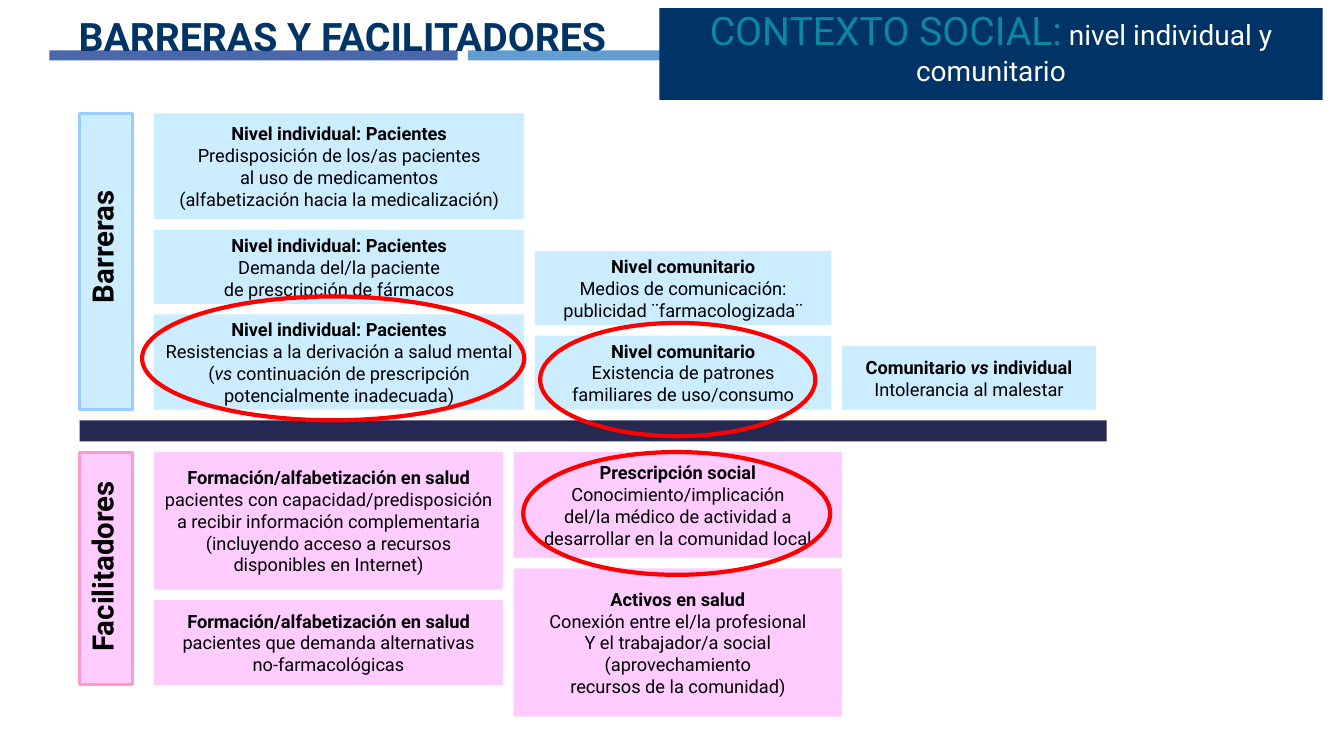
from dataclasses import dataclass

from pptx import Presentation, util as u
from pptx.dml import color
from pptx.enum import shapes, text


@dataclass(frozen=True)
class Theme:
    font: str = "Roboto"
    navy: str = "003366"
    teal: str = "0B87A1"
    white: str = "FFFFFF"
    black: str = "000000"
    indigo: str = "4A66AC"
    sky: str = "629DD1"
    divider: str = "242852"
    barrier: str = "CCECFF"
    barrier_edge: str = "99CCFF"
    enabler: str = "FFCCFF"
    enabler_edge: str = "FF99CC"
    highlight: str = "FF0000"
    title_size: int = 28
    subtitle_size: int = 20
    label_size: int = 21
    body_size: int = 13


class Board:
    """Holds the style and the slide; lengths are grid cells or percentages."""

    CELL, LEFT, TOP = 7.56, 56.88, 81  # points

    def __init__(self, deck, theme):
        self.deck, self.theme = deck, theme
        self.slide = deck.slides.add_slide(deck.slide_layouts[6])

    def cells(self, column, row, wide, high):
        return [u.Pt(n) for n in (self.LEFT + column * self.CELL, self.TOP + row * self.CELL,
                                  wide * self.CELL, high * self.CELL)]

    def share(self, *percent):
        sides = (self.deck.slide_width, self.deck.slide_height) * 2
        return [round(side * part / 100) for side, part in zip(sides, percent)]

    def block(self, place, fill=None, edge=None, weight=2, kind=shapes.MSO_SHAPE.RECTANGLE):
        block = self.slide.shapes.add_shape(kind, *place)
        block.shadow.inherit = False
        if fill:
            block.fill.solid()
            block.fill.fore_color.rgb = color.RGBColor.from_string(fill)
        else:
            block.fill.background()
        if edge:
            block.line.color.rgb = color.RGBColor.from_string(edge)
            block.line.width = u.Pt(weight)
        else:
            block.line.fill.background()
        return block

    def frame(self, holder, anchor, wrap, side, end):
        frame = holder.text_frame
        frame.word_wrap, frame.vertical_anchor = wrap, anchor
        frame.margin_left = frame.margin_right = u.Inches(side)
        frame.margin_top = frame.margin_bottom = u.Inches(end)
        return frame

    def style(self, run, size, ink, bold=False, italic=False):
        font = run.font
        font.name, font.size, font.bold, font.italic = self.theme.font, u.Pt(size), bold, italic
        font.color.rgb = color.RGBColor.from_string(ink)

    def card(self, place, fill, lines):
        """Bold first line, plain lines below; *asterisks* mark italics."""
        frame = self.frame(self.block(place, fill), text.MSO_ANCHOR.MIDDLE, False, 0.13, 0.07)
        frame.text = "\n".join(lines)
        for number, paragraph in enumerate(frame.paragraphs):
            paragraph.alignment = text.PP_ALIGN.CENTER
            pieces = paragraph.text.split("*")
            paragraph.text = pieces[0]
            for piece in pieces[1:]:
                paragraph.add_run().text = piece
            for order, run in enumerate(paragraph.runs):
                self.style(run, self.theme.body_size, self.theme.black, number == 0, order % 2 == 1)

    def heading(self, place, words, size, ink, upward=False):
        holder = self.slide.shapes.add_textbox(*place)
        anchor = text.MSO_ANCHOR.MIDDLE if upward else text.MSO_ANCHOR.BOTTOM
        frame = self.frame(holder, anchor, not upward, 0.1, 0.05)
        frame.text = words
        frame.paragraphs[0].alignment = text.PP_ALIGN.CENTER
        self.style(frame.paragraphs[0].runs[0], size, ink, bold=True)
        if upward:
            holder.text_frame._txBody.bodyPr.set("vert", "vert270")

    def banner(self, place, fill, parts):
        frame = self.frame(self.block(place, fill), text.MSO_ANCHOR.BOTTOM, True, 0.13, 0.13)
        line = frame.paragraphs[0]
        line.alignment = text.PP_ALIGN.CENTER
        for words, size, ink in parts:
            run = line.add_run()
            run.text = words
            self.style(run, size, ink)

    def ring(self, place):
        self.block(place, edge=self.theme.highlight, weight=3, kind=shapes.MSO_SHAPE.OVAL)


# Each card: grid place (column, row, width, height) and its lines
PATIENTS = "Nivel individual: Pacientes"
COMMUNITY = "Nivel comunitario"
TRAINING = "Formación/alfabetización en salud"
BARRIERS = [
    ((7, 0, 35, 10), [PATIENTS, "Predisposición de los/as pacientes", "al uso de medicamentos",
                      "(alfabetización hacia la medicalización)"]),
    ((7, 11, 35, 7), [PATIENTS, "Demanda del/la paciente", "de prescripción de fármacos"]),
    ((7, 19, 35, 9), [PATIENTS, "Resistencias a la derivación a salud mental",
                      "(*vs* continuación de prescripción", "potencialmente inadecuada)"]),
    ((43, 13, 28, 7), [COMMUNITY, "Medios de comunicación:", "publicidad ¨farmacologizada¨"]),
    ((43, 21, 28, 7), [COMMUNITY, "Existencia de patrones", "familiares de uso/consumo"]),
    ((72, 22, 24, 6), ["Comunitario *vs* individual", "Intolerancia al malestar"]),
]
ENABLERS = [
    ((7, 32, 33, 13), [TRAINING, "pacientes con capacidad/predisposición",
                       "a recibir información complementaria",
                       "(incluyendo acceso a recursos", "disponibles en Internet)"]),
    ((7, 46, 33, 8), [TRAINING, "pacientes que demanda alternativas", "no-farmacológicas"]),
    ((41, 32, 31, 10), ["Prescripción social", "Conocimiento/implicación",
                        "del/la médico de actividad a", "desarrollar en la comunidad local"]),
    ((41, 43, 31, 14), ["Activos en salud", "Conexión entre el/la profesional",
                        "Y el trabajador/a social", "(aprovechamiento",
                        "recursos de la comunidad)"]),
]
RINGS = [(5.9, 17.3, 36.1, 11.7), (43.5, 19.8, 26, 10.7), (41.9, 32, 29, 11.6)]


def main():
    deck = Presentation()
    deck.slide_width, deck.slide_height = u.Inches(13.33), u.Inches(7.5)
    theme = Theme()
    board = Board(deck, theme)

    # Header: two bars, banner and title
    for left, fill in ((3.68, theme.indigo), (34.81, theme.sky)):
        board.block(board.share(left, 6.67, 30.38, 1.33), fill)
    board.banner(board.share(49.06, 1.07, 49.36, 12.13), theme.navy, [
        ("CONTEXTO SOCIAL:", theme.title_size, theme.teal),
        (" nivel individual y comunitario", theme.subtitle_size, theme.white)])
    board.heading(board.share(-0.38, 1.47, 51.69, 7.07), "BARRERAS Y FACILITADORES",
                  theme.title_size, theme.navy)

    # Side labels and their cards, above and below the divider
    board.block(board.cells(0, 29, 97, 2), theme.divider)
    sections = [
        ("Barreras", (0, 0, 5, 28), (-0.4, 6.6, 5, 12), theme.barrier, theme.barrier_edge, BARRIERS),
        ("Facilitadores", (0, 32, 5, 22), (-0.4, 33.8, 5, 18), theme.enabler, theme.enabler_edge,
         ENABLERS),
    ]
    for name, strip, label, fill, edge, cards in sections:
        board.block(board.cells(*strip), fill, edge)
        board.heading(board.cells(*label), name, theme.label_size, theme.black, upward=True)
        for place, lines in cards:
            board.card(board.cells(*place), fill, lines)

    # Highlight rings
    for place in RINGS:
        board.ring(board.cells(*place))

    deck.save("out.pptx")


if __name__ == "__main__":
    main()
